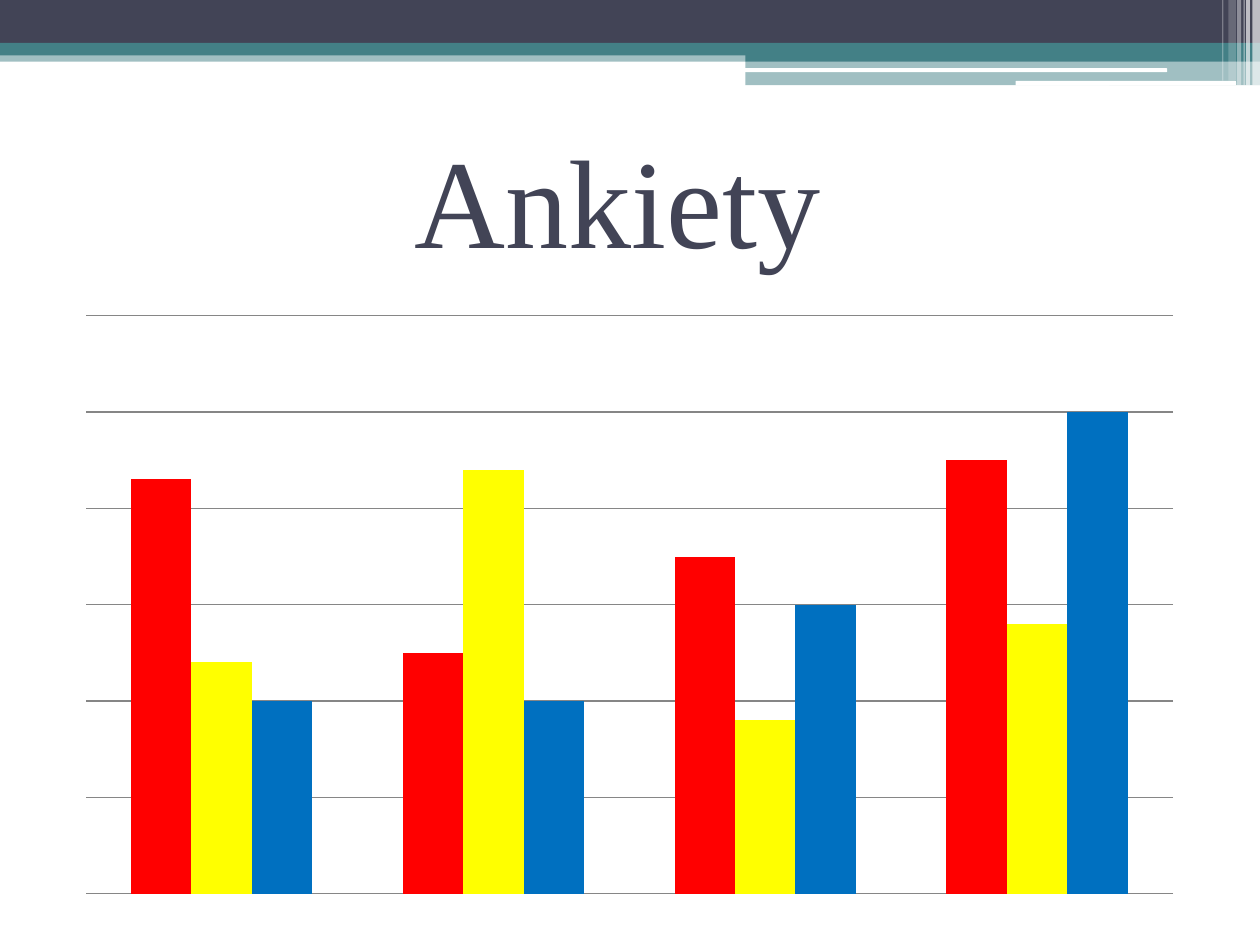
from lxml.etree import SubElement
from pptx import Presentation
from pptx.chart.data import CategoryChartData
from pptx.dml.color import RGBColor
from pptx.enum.chart import XL_CHART_TYPE
from pptx.enum.shapes import MSO_SHAPE
from pptx.enum.text import MSO_ANCHOR, PP_ALIGN
from pptx.oxml import parse_xml
from pptx.oxml.ns import nsdecls, qn
from pptx.util import Pt

COLORS = {"navy": "424456", "teal": "438086", "white": "FFFFFF", "black": "000000",
          "grid": "868686", "red": "FF0000", "yellow": "FFFF00", "blue": "0070C0"}

TITLE = "Ankiety"
CATEGORIES = ["1", "2", "3", "4"]
SERIES = [
    ("Series 1", [86, 50, 70, 90], "red"),
    ("Series 2", [48, 88, 36, 56], "yellow"),
    ("Series 3", [40, 40, 60, 100], "blue"),
]

# left, top, width, height, color, opacity in percent
BANDS = [
    (0, 28.8, 720, 6.5, "teal", 50),
    (0, 0, 720, 24.5, "navy", 100),
    (0, 24.5, 720, 7.2, "teal", 100),
    (426, 28.1, 294, 7.2, "teal", 100),
    (426, 35.2, 294, 13.5, "teal", 50),
]
# left, top, width, height
WHITE_BARS = [(425.5, 39, 241.5, 2.2), (580.3, 46.3, 126, 2.6)]
# left, width, height, opacity in percent
STRIPES = [
    (715.7, 4.3, 49, 65),
    (712.1, 2.2, 49, 65),
    (710.6, 0.7, 49, 60),
    (707, 2.2, 49, 40),
    (702, 4.3, 46.1, 20),
    (698.4, 0.7, 46.1, 30),
]


def rgb(name):
    return RGBColor.from_string(COLORS[name])


def add_block(slide, left, top, width, height, color, opacity=100, kind=MSO_SHAPE.RECTANGLE):
    shape = slide.shapes.add_shape(kind, Pt(left), Pt(top), Pt(width), Pt(height))
    shape.shadow.inherit = False
    shape.line.fill.background()
    shape.fill.solid()
    shape.fill.fore_color.rgb = rgb(color)
    if opacity < 100:
        color_element = shape.fill._xPr.find(qn("a:solidFill"))[0]
        SubElement(color_element, qn("a:alpha")).set("val", str(opacity * 1000))


def write_text(shape, text, *, size, font, color, align=PP_ALIGN.LEFT):
    frame = shape.text_frame
    frame.word_wrap = True
    frame.vertical_anchor = MSO_ANCHOR.MIDDLE
    paragraph = frame.paragraphs[0]
    paragraph.alignment = align
    run = paragraph.add_run()
    run.text = text
    run.font.size = Pt(size)
    run.font.name = font
    run.font.color.rgb = rgb(color)


def add_title(slide):
    title = slide.shapes.title
    title.left, title.top, title.width, title.height = Pt(229.7), Pt(71.3), Pt(255), Pt(84.2)
    write_text(title, TITLE, size=72, font="Times New Roman", color="navy")


def add_survey_chart(slide):
    data = CategoryChartData()
    data.categories = CATEGORIES
    for name, values, _ in SERIES:
        data.add_series(name, values)
    chart = slide.shapes.add_chart(XL_CHART_TYPE.COLUMN_CLUSTERED,
                                   Pt(36), Pt(173.5), Pt(647.3), Pt(344.2), data).chart
    chart.has_legend = False
    chart.has_title = False
    chart.font.size = Pt(18)
    chart.font.name = "TeX Gyre Schola"
    chart.font.color.rgb = rgb("black")

    chart.category_axis.visible = False
    value_axis = chart.value_axis
    value_axis.visible = False
    value_axis.minimum_scale, value_axis.maximum_scale = 0, 120
    value_axis.major_unit = 20
    value_axis.has_major_gridlines = True
    grid = value_axis.major_gridlines.format.line
    grid.color.rgb = rgb("grid")
    grid.width = Pt(0.75)

    plot = chart.plots[0]
    plot.gap_width = 150
    plot.overlap = 0
    plot.vary_by_categories = False
    for series, (_, _, color) in zip(plot.series, SERIES):
        series.format.fill.solid()
        series.format.fill.fore_color.rgb = rgb(color)
    set_plot_margin(chart, 0.02)


def set_plot_margin(chart, margin):
    """Inset the plot area by the same fraction of the chart on every side."""
    plot_area = chart._chartSpace.chart.plotArea
    for layout in plot_area.findall(qn("c:layout")):
        plot_area.remove(layout)
    extent = 1 - 2 * margin
    plot_area.insert(0, parse_xml(
        f'<c:layout {nsdecls("c")}><c:manualLayout><c:layoutTarget val="inner"/>'
        '<c:xMode val="edge"/><c:yMode val="edge"/>'
        f'<c:x val="{margin}"/><c:y val="{margin}"/><c:w val="{extent}"/><c:h val="{extent}"/>'
        '</c:manualLayout></c:layout>'))


def main():
    presentation = Presentation()
    presentation.slide_width, presentation.slide_height = Pt(720), Pt(540)
    slide = presentation.slides.add_slide(presentation.slide_layouts[5])
    for band in BANDS:
        add_block(slide, *band)
    for bar in WHITE_BARS:
        add_block(slide, *bar, "white", kind=MSO_SHAPE.ROUNDED_RECTANGLE)
    for left, width, height, opacity in STRIPES:
        add_block(slide, left, 0, width, height, "white", opacity)
    add_title(slide)
    add_survey_chart(slide)
    presentation.save("out.pptx")


if __name__ == "__main__":
    main()
